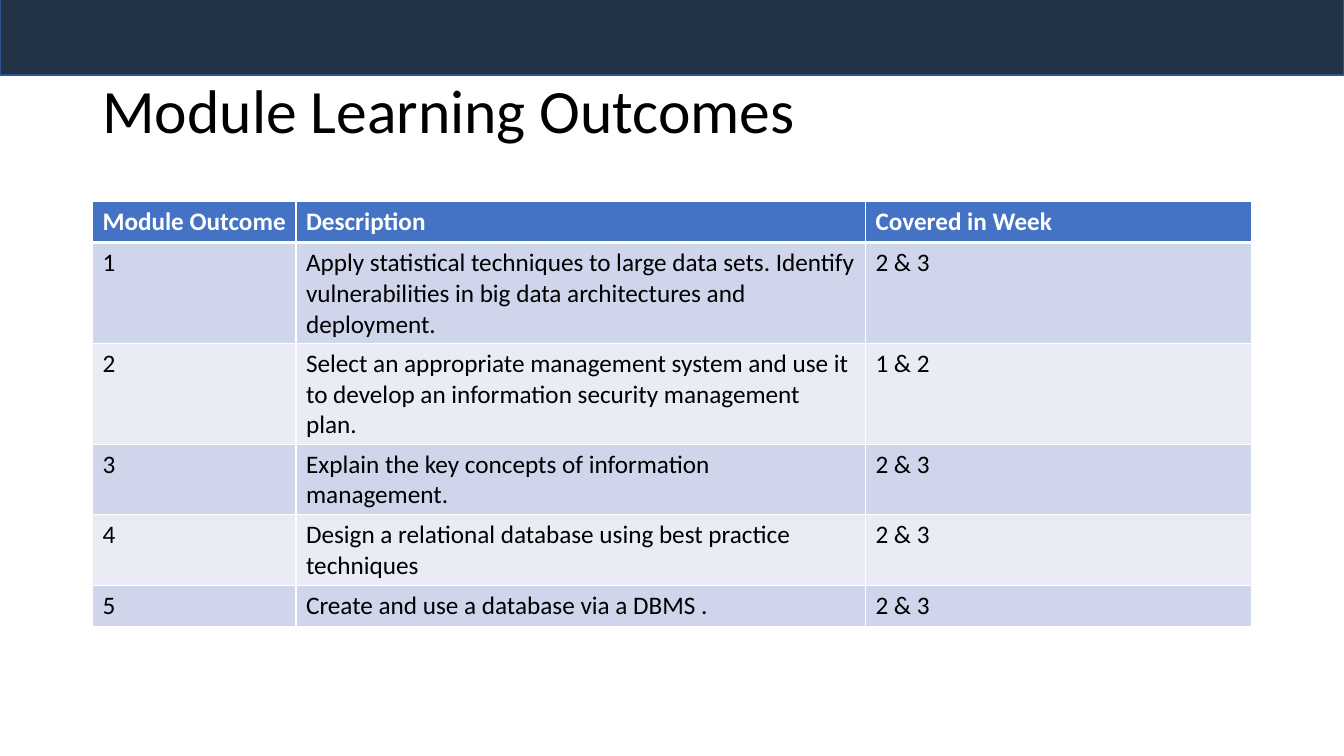
from pptx import Presentation
from pptx.dml.color import RGBColor
from pptx.enum.shapes import MSO_SHAPE
from pptx.enum.text import MSO_ANCHOR
from pptx.oxml import parse_xml
from pptx.oxml.ns import nsdecls
from pptx.util import Cm, Pt


def hue(code):
    return RGBColor.from_string(code)


def style(font, form, color):
    for name, value in form.items():
        setattr(font, name, value)
    font.color.rgb = hue(color)


TITLE = {"name": "Calibri", "size": Pt(44), "bold": False}
HEAD = {"name": "Calibri", "size": Pt(18), "bold": True}
BODY = {**HEAD, "bold": False}

deck = Presentation()
deck.slide_width, deck.slide_height = Cm(33.87), Cm(19.05)
slide = deck.slides.add_slide(deck.slide_layouts[6])

# Top band
band = slide.shapes.add_shape(MSO_SHAPE.RECTANGLE, Cm(0), Cm(-0.09), Cm(33.87), Cm(1.98))
band.shadow.inherit = False
band.fill.solid()
band.fill.fore_color.rgb = hue("223346")
band.line.color.rgb = hue("325491")
band.line.width = Pt(1)

# Title
box = slide.shapes.add_textbox(Cm(2.33), Cm(1.01), Cm(29.21), Cm(3.68))
frame = box.text_frame
frame.word_wrap = True
frame.vertical_anchor = MSO_ANCHOR.MIDDLE
para = frame.paragraphs[0]
para.text = "Module Learning Outcomes"
para.line_spacing = 0.9
style(para.font, TITLE, "000000")

# Outcomes table
rows = [
    ("Module Outcome", "Description", "Covered in Week"),
    ("1", "Apply statistical techniques to large data sets. Identify "
     "vulnerabilities in big data architectures and deployment.", "2 & 3"),
    ("2", "Select an appropriate management system and use it to develop "
     "an information security management plan.", "1 & 2"),
    ("3", "Explain the key concepts of information management.", "2 & 3"),
    ("4", "Design a relational database using best practice techniques", "2 & 3"),
    ("5", "Create and use a database via a DBMS .", "2 & 3"),
]
widths = [5.13, 14.35, 9.73]
high = 1.03
table = slide.shapes.add_table(len(rows), len(widths), Cm(2.33), Cm(5.08),
                               Cm(sum(widths)), Cm(high * len(rows))).table
for col, width in zip(table.columns, widths):
    col.width = Cm(width)

for r, row in enumerate(rows):
    table.rows[r].height = Cm(high)
    if r == 0:
        form, ink, fill = HEAD, "FFFFFF", "4472C4"
    else:
        form, ink, fill = BODY, "000000", "CFD5EA" if r % 2 else "E9EBF5"
    for c, text in enumerate(row):
        cell = table.cell(r, c)
        cell.text = text
        style(cell.text_frame.paragraphs[0].font, form, ink)
        # White borders, thicker under the header; they precede the fill
        for side in ("lnL", "lnR", "lnT", "lnB"):
            thick = (r, side) in ((0, "lnB"), (1, "lnT"))
            cell._tc.get_or_add_tcPr().append(parse_xml(
                f'<a:{side} {nsdecls("a")} w="{Pt(3 if thick else 1)}"><a:solidFill>'
                f'<a:srgbClr val="FFFFFF"/></a:solidFill></a:{side}>'))
        cell.fill.solid()
        cell.fill.fore_color.rgb = hue(fill)

deck.save("out.pptx")
